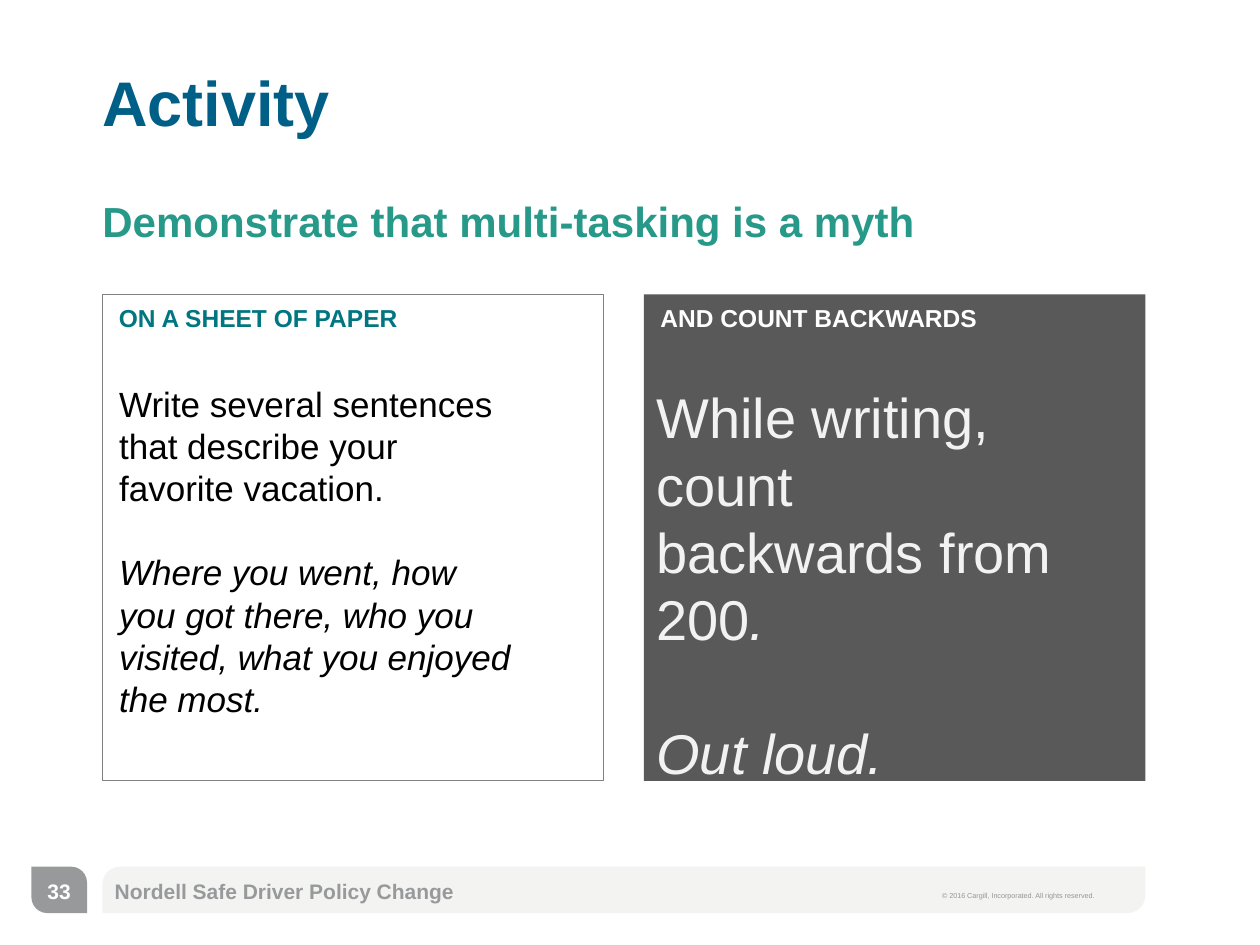
from dataclasses import dataclass
from typing import Optional

from pptx import Presentation
from pptx.dml.color import RGBColor
from pptx.enum.shapes import MSO_SHAPE
from pptx.enum.text import MSO_ANCHOR, PP_ALIGN
from pptx.util import Pt

RECTANGLE = MSO_SHAPE.RECTANGLE
ROUND_DIAGONAL = MSO_SHAPE.ROUND_2_DIAG_RECTANGLE
TOP, MIDDLE = MSO_ANCHOR.TOP, MSO_ANCHOR.MIDDLE
LEFT, CENTER = PP_ALIGN.LEFT, PP_ALIGN.CENTER

WHITE = RGBColor(0xFF, 0xFF, 0xFF)
BLACK = RGBColor(0x00, 0x00, 0x00)
BLUE = RGBColor(0x00, 0x5F, 0x86)
GREEN = RGBColor(0x27, 0x99, 0x89)
TEAL = RGBColor(0x00, 0x76, 0x81)
DARK_GRAY = RGBColor(0x59, 0x59, 0x59)
BORDER_GRAY = RGBColor(0x80, 0x80, 0x80)
BADGE_GRAY = RGBColor(0x97, 0x99, 0x9B)
NOTICE_GRAY = RGBColor(0x95, 0x95, 0x95)
FOOTER_GRAY = RGBColor(0xF3, 0xF3, 0xF2)
PALE_GRAY = RGBColor(0xF2, 0xF2, 0xF2)

FONT = "Arial"
MARGIN_LEFT = 58.5
CONTENT_WIDTH = 596
PANEL_TOP, PANEL_WIDTH, PANEL_HEIGHT = 168.25, 286.5, 278
RIGHT_PANEL_LEFT = MARGIN_LEFT + CONTENT_WIDTH - PANEL_WIDTH
FOOTER_TOP, FOOTER_HEIGHT = 495.25, 26.5
DEFAULT_INSETS = (7.2, 3.6)
FLUSH_INSETS = (0, 3.6)


@dataclass(frozen=True)
class Box:
    left: float
    top: float
    width: float
    height: float

    def lengths(self) -> tuple:
        return Pt(self.left), Pt(self.top), Pt(self.width), Pt(self.height)


@dataclass(frozen=True)
class Style:
    size: float
    color: RGBColor
    bold: bool = False
    line_spacing: Optional[float] = None
    align: PP_ALIGN = LEFT


@dataclass(frozen=True)
class Words:
    text: str
    italic: bool = False


@dataclass(frozen=True)
class Panel:
    box: Box
    fill: Optional[RGBColor]
    border: Optional[RGBColor]
    heading: str
    heading_color: RGBColor
    body_box: Box
    body_style: Style
    paragraphs: tuple


PANELS = (
    Panel(
        Box(MARGIN_LEFT, PANEL_TOP, PANEL_WIDTH, PANEL_HEIGHT),
        None, BORDER_GRAY, "ON A SHEET OF PAPER", TEAL,
        Box(61, 215.25, 244, 201), Style(20, BLACK, line_spacing=24),
        (
            (Words("Write several sentences that describe your favorite vacation."),),
            (Words("Where you went, how you got there, who you visited, "
                   "what you enjoyed the most.", italic=True),),
        ),
    ),
    Panel(
        Box(RIGHT_PANEL_LEFT, PANEL_TOP, PANEL_WIDTH, PANEL_HEIGHT),
        DARK_GRAY, None, "AND COUNT BACKWARDS", WHITE,
        Box(RIGHT_PANEL_LEFT, 215.25, 244, 240), Style(32, PALE_GRAY, line_spacing=38.4),
        (
            (Words("While writing, count backwards from 200"), Words(".", italic=True)),
            (Words("Out loud.", italic=True),),
        ),
    ),
)


def write_text(frame, paragraphs: tuple, style: Style, insets: tuple = DEFAULT_INSETS,
               anchor: MSO_ANCHOR = TOP, wrap: bool = True) -> None:
    """Fill a text frame, leaving one line's gap between paragraphs."""
    frame.word_wrap = wrap
    frame.vertical_anchor = anchor
    frame.margin_left = frame.margin_right = Pt(insets[0])
    frame.margin_top = frame.margin_bottom = Pt(insets[1])
    for index, words_list in enumerate(paragraphs):
        paragraph = frame.add_paragraph() if index else frame.paragraphs[0]
        paragraph.alignment = style.align
        if style.line_spacing:
            paragraph.line_spacing = Pt(style.line_spacing)
            if index:
                paragraph.space_before = Pt(style.line_spacing)
        for words in words_list:
            run = paragraph.add_run()
            run.text = words.text
            run.font.name = FONT
            run.font.size = Pt(style.size)
            run.font.bold = style.bold
            run.font.italic = words.italic
            run.font.color.rgb = style.color


def add_text(slide, box: Box, paragraphs: tuple, style: Style, **options):
    text_box = slide.shapes.add_textbox(*box.lengths())
    write_text(text_box.text_frame, paragraphs, style, **options)
    return text_box


def add_block(slide, preset: MSO_SHAPE, box: Box, fill: Optional[RGBColor],
              border: Optional[RGBColor] = None, corners: tuple = ()):
    block = slide.shapes.add_shape(preset, *box.lengths())
    block.shadow.inherit = False
    for index, corner in enumerate(corners):
        block.adjustments[index] = corner
    if fill is None:
        block.fill.background()
    else:
        block.fill.solid()
        block.fill.fore_color.rgb = fill
    if border is None:
        block.line.fill.background()
    else:
        block.line.color.rgb = border
        block.line.width = Pt(0.75)
    return block


def add_panel(slide, panel: Panel) -> None:
    block = add_block(slide, RECTANGLE, panel.box, panel.fill, panel.border)
    heading_style = Style(14, panel.heading_color, bold=True, line_spacing=18)
    write_text(block.text_frame, ((Words(panel.heading),),), heading_style, insets=(9.4, 3.6))
    add_text(slide, panel.body_box, panel.paragraphs, panel.body_style)


def add_footer(slide) -> None:
    add_block(slide, ROUND_DIAGONAL, Box(MARGIN_LEFT, FOOTER_TOP, CONTENT_WIDTH, FOOTER_HEIGHT),
              FOOTER_GRAY, corners=(0.38, 0))
    add_block(slide, ROUND_DIAGONAL, Box(18, FOOTER_TOP, 31.75, FOOTER_HEIGHT),
              BADGE_GRAY, corners=(0, 0.34))
    notice = add_text(slide, Box(531.25, 505.25, 114.5, 16),
                      ((Words("© 2016 Cargill, Incorporated. All rights reserved."),),),
                      Style(7, NOTICE_GRAY), wrap=False)
    notice_run = notice.text_frame.paragraphs[0].runs[0]
    notice_run._r.get_or_add_rPr().set("baseline", "30000")
    add_text(slide, Box(MARGIN_LEFT, 494.5, 360, 29),
             ((Words("Nordell Safe Driver Policy Change"),),),
             Style(12, BADGE_GRAY, bold=True), anchor=MIDDLE)
    add_text(slide, Box(19, 494.5, 29.5, 29), ((Words("33"),),),
             Style(12, WHITE, bold=True, align=CENTER), anchor=MIDDLE, wrap=False)


def main() -> None:
    presentation = Presentation()
    presentation.slide_width, presentation.slide_height = Pt(720), Pt(540)
    slide = presentation.slides.add_slide(presentation.slide_layouts[5])

    title = slide.shapes.title
    title.left, title.top, title.width, title.height = Box(
        MARGIN_LEFT, 39.5, CONTENT_WIDTH, 67.5).lengths()
    write_text(title.text_frame, ((Words("Activity"),),),
               Style(36, BLUE, bold=True, line_spacing=40), insets=(0, 0))

    add_text(slide, Box(MARGIN_LEFT, 108, CONTENT_WIDTH, 54),
             ((Words("Demonstrate that multi-tasking is a myth"),),),
             Style(24, GREEN, bold=True, line_spacing=29), insets=FLUSH_INSETS)
    add_footer(slide)
    for panel in PANELS:
        add_panel(slide, panel)
    presentation.save("out.pptx")


if __name__ == "__main__":
    main()
